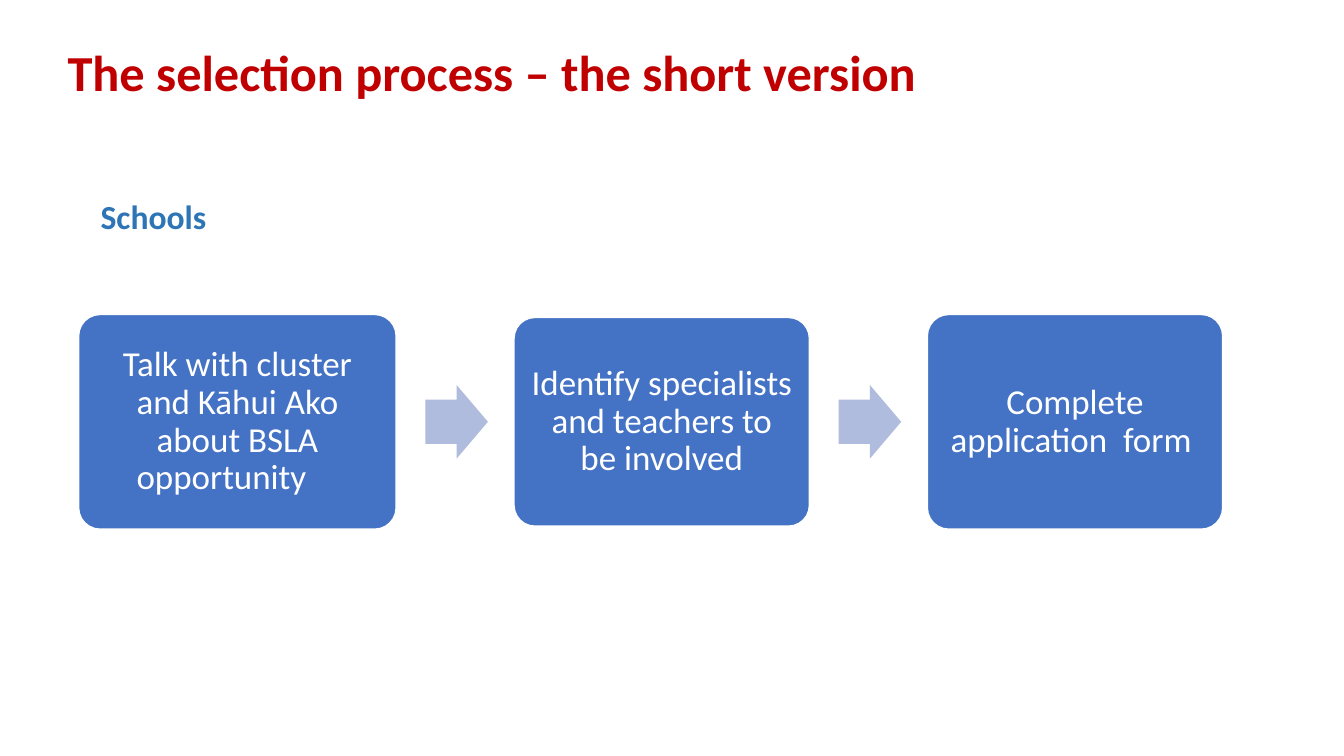
from pptx import Presentation
from pptx.dml.color import RGBColor as Rgb
from pptx.enum.shapes import MSO_SHAPE as Kind
from pptx.enum.text import MSO_ANCHOR as Anchor, MSO_AUTO_SIZE as Fit, PP_ALIGN as Align
from pptx.util import Inches, Pt

theme = {
    "font": "Calibri",
    "red": "C00000", "blue": "2E75B6", "box": "4472C4", "arrow": "B0BCDE", "white": "FFFFFF",
    "title": 36, "head": 24, "step": 25,
}
cell = Inches(0.1)  # side of one grid square


def grid(*nums):
    return [round(n * cell) for n in nums]


def write(para, text, size, tone, bold=False):
    run = para.add_run()
    run.text = text
    font = run.font
    font.name, font.size, font.bold = theme["font"], Pt(theme[size]), bold
    font.color.rgb = Rgb.from_string(theme[tone])


deck = Presentation()
deck.slide_width, deck.slide_height = grid(133.33, 75)
slide = deck.slides.add_slide(deck.slide_layouts[5])
shapes = slide.shapes

# Title
title = shapes.title
title.left, title.top, title.width, title.height = grid(5.7, 3.6, 107.6, 7.8)
frame = title.text_frame
frame.vertical_anchor = Anchor.MIDDLE
para = frame.paragraphs[0]
para.alignment, para.line_spacing = Align.LEFT, 0.9
write(para, "The selection process – the short version", "title", "red", True)

# Steps: right edges are evenly spaced, all centred on one row
steps = [
    ("Talk with cluster and Kāhui Ako about BSLA opportunity \t", 31.5, 21.3),
    ("Identify specialists and teachers to be involved", 29.3, 20.7),
    ("Complete application  form ", 29.3, 21.3),
]
edge, pitch, mid = 39.3, 41, 41.85
gap, wide, high = 2.9, 6.2, 7.3

for num, (text, width, height) in enumerate(steps):
    right = edge + num * pitch
    box = shapes.add_shape(Kind.ROUNDED_RECTANGLE,
                           *grid(right - width, mid - height / 2, width, height))
    box.adjustments[0] = 0.1
    box.shadow.inherit = False
    box.fill.solid()
    box.fill.fore_color.rgb = Rgb.from_string(theme["box"])
    box.line.color.rgb = Rgb.from_string(theme["white"])
    box.line.width = Pt(1)
    frame = box.text_frame
    frame.word_wrap = True
    frame.vertical_anchor = Anchor.MIDDLE
    frame.margin_left = frame.margin_right = frame.margin_top = frame.margin_bottom = cell
    para = frame.paragraphs[0]
    para.alignment, para.line_spacing = Align.CENTER, 0.9
    write(para, text, "step", "white")

    # Arrow to the next step
    if num < len(steps) - 1:
        arrow = shapes.add_shape(Kind.RIGHT_ARROW,
                                 *grid(right + gap, mid - high / 2, wide, high))
        arrow.adjustments[0], arrow.adjustments[1] = 0.6, 0.5
        arrow.shadow.inherit = False
        arrow.fill.solid()
        arrow.fill.fore_color.rgb = Rgb.from_string(theme["arrow"])
        arrow.line.fill.background()

# Heading above the steps
head = shapes.add_textbox(*grid(9, 18.9, 19.4, 5))
head.text_frame.word_wrap = True
head.text_frame.auto_size = Fit.SHAPE_TO_FIT_TEXT
write(head.text_frame.paragraphs[0], "Schools", "head", "blue", True)

deck.save("out.pptx")
